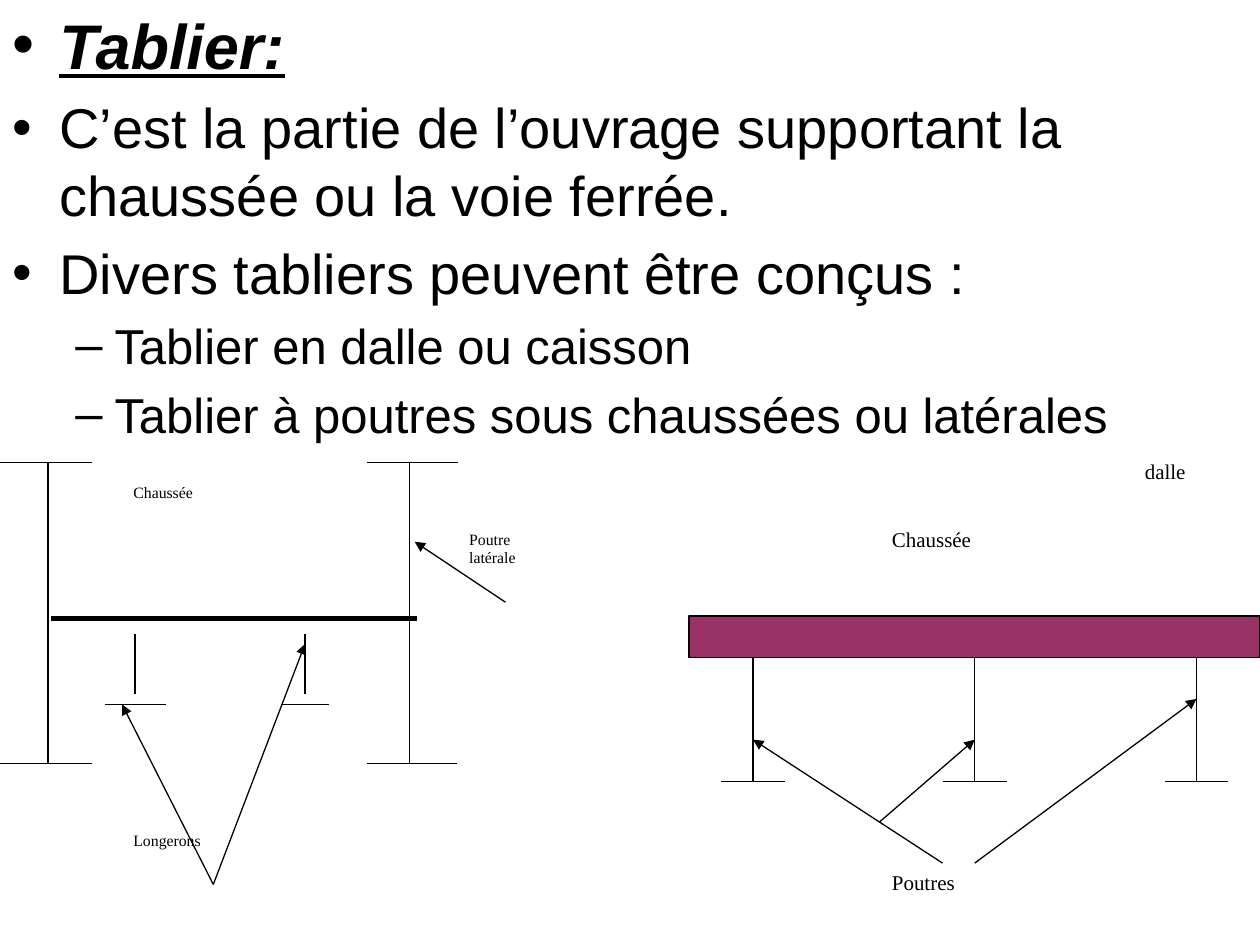
from lxml import etree
from pptx import Presentation
from pptx.dml.color import RGBColor
from pptx.enum.shapes import MSO_CONNECTOR, MSO_SHAPE
from pptx.enum.text import MSO_ANCHOR, PP_ALIGN
from pptx.oxml.ns import qn
from pptx.util import Cm, Pt

BLACK = RGBColor(0x00, 0x00, 0x00)
WHITE = RGBColor(0xFF, 0xFF, 0xFF)
PLUM = RGBColor(0x99, 0x33, 0x66)
STRAIGHT = MSO_CONNECTOR.STRAIGHT
RECTANGLE = MSO_SHAPE.RECTANGLE
TOP = MSO_ANCHOR.TOP
LEFT = PP_ALIGN.LEFT

# Text, size, level, emphasis
BULLETS = [
    ("Tablier:", 36, 0, True),
    ("C’est la partie de l’ouvrage supportant la chaussée ou la voie ferrée.", 32, 0, False),
    ("Divers tabliers peuvent être conçus\u00a0:", 32, 0, False),
    ("Tablier en dalle ou caisson", 28, 1, False),
    ("Tablier à poutres sous chaussées ou latérales", 28, 1, False),
]
# Left margin, hanging indent and symbol of each level
LEVELS = [(0.95, -0.95, "•"), (2.06, -0.79, "–")]


def write_text(para, text, size, font="Times New Roman", emphasis=False):
    para.alignment = LEFT
    span = para.add_run()
    span.text = text
    span.font.name = font
    span.font.size = Pt(size)
    span.font.color.rgb = BLACK
    span.font.bold = span.font.italic = span.font.underline = emphasis


def set_bullet(para, level):
    margin, indent, symbol = LEVELS[level]
    para.level = level
    props = para._p.get_or_add_pPr()
    props.set("marL", str(Cm(margin)))
    props.set("indent", str(Cm(indent)))
    before = etree.SubElement(props, qn("a:spcBef"))
    etree.SubElement(before, qn("a:spcPct")).set("val", "20000")
    etree.SubElement(props, qn("a:buFont")).set("typeface", "Arial")
    etree.SubElement(props, qn("a:buChar")).set("char", symbol)


def add_bullets(page, width, height):
    box = page.shapes.add_textbox(0, 0, width, height)
    frame = box.text_frame
    frame.word_wrap = True
    for index, (text, size, level, emphasis) in enumerate(BULLETS):
        para = frame.add_paragraph() if index else frame.paragraphs[0]
        set_bullet(para, level)
        write_text(para, text, size, font="Arial", emphasis=emphasis)


def add_line(page, x1, y1, x2, y2, width=0.75, arrow=False):
    line = page.shapes.add_connector(STRAIGHT, Cm(x1), Cm(y1), Cm(x2), Cm(y2))
    line.line.color.rgb = BLACK
    line.line.width = Pt(width)
    if arrow:
        etree.SubElement(line.line._get_or_add_ln(), qn("a:tailEnd")).set("type", "triangle")
    etree.SubElement(line._element.spPr, qn("a:effectLst"))


def add_box(page, left, top, width, height, fill=WHITE, outline=WHITE):
    box = page.shapes.add_shape(RECTANGLE, Cm(left), Cm(top), Cm(width), Cm(height))
    box.shadow.inherit = False
    box.fill.solid()
    box.fill.fore_color.rgb = fill
    box.line.color.rgb = outline
    box.line.width = Pt(0.75)
    return box


def add_label(page, lines, left, top, width, height, size, inset=0.25):
    frame = add_box(page, left, top, width, height).text_frame
    frame.word_wrap = True
    frame.vertical_anchor = TOP
    frame.margin_left = frame.margin_right = Cm(inset)
    frame.margin_top = frame.margin_bottom = Cm(0.13)
    for index, text in enumerate(lines):
        para = frame.add_paragraph() if index else frame.paragraphs[0]
        write_text(para, text, size)


def add_side_beam_section(page):
    # Side beams: two flanges and a web each
    top, bottom = 9.32, 15.39
    for start, end, web in [(0, 1.85, 0.97), (7.39, 9.23, 8.26)]:
        for y in (top, bottom):
            add_line(page, start, y, end, y)
        add_line(page, web, top, web, bottom)

    # Roadway and stringers
    add_line(page, 1.02, 12.47, 8.41, 12.47, width=3)
    for web, start, end in [(2.72, 2.11, 3.35), (6.15, 5.66, 6.63)]:
        add_line(page, web, 12.78, web, 14)
        add_line(page, start, 14.2, end, 14.2)

    # Labels and their arrows
    add_label(page, ["Poutre", "latérale"], 9.23, 10.54, 3.07, 4.85, 9, inset=0.23)
    add_label(page, ["Chaussée"], 2.46, 9.6, 3.68, 2.44, 9, inset=0.23)
    add_label(page, ["Longerons"], 2.46, 16.61, 4.29, 2.44, 9, inset=0.23)
    add_line(page, 10.19, 12.14, 8.36, 10.92, arrow=True)
    for x, y in [(2.46, 14.2), (6.15, 12.98)]:
        add_line(page, 4.3, 17.83, x, y, arrow=True)


def add_slab_section(page):
    # Slab on three evenly spaced beams
    add_box(page, 13.89, 12.42, 11.51, 0.84, fill=PLUM, outline=BLACK)
    first, gap, half_flange = 15.18, 4.47, 0.64
    beams = [first + gap * index for index in range(3)]
    for x in beams:
        add_line(page, x, 13.26, x, 15.75)
        add_line(page, x - half_flange, 15.75, x + half_flange, 15.75)

    # Labels and their arrows
    add_label(page, ["dalle"], 22.83, 9.12, 2.57, 1.65, 12)
    for text, top in [("Chaussée", 10.49), ("Poutres", 17.4)]:
        add_label(page, [text], 17.73, top, 3.84, 1.65, 12)
    starts = [(19, 17.4), (17.73, 16.57), (19.65, 17.4)]
    for (x, y), beam, tip in zip(starts, beams, (14.91, 14.91, 14.09)):
        add_line(page, x, y, beam, tip, arrow=True)


def main():
    deck = Presentation()
    deck.slide_width = Cm(25.4)
    deck.slide_height = Cm(19.05)
    page = deck.slides.add_slide(deck.slide_layouts[6])
    add_bullets(page, deck.slide_width, deck.slide_height)
    add_side_beam_section(page)
    add_slab_section(page)
    deck.save("out.pptx")


if __name__ == "__main__":
    main()
